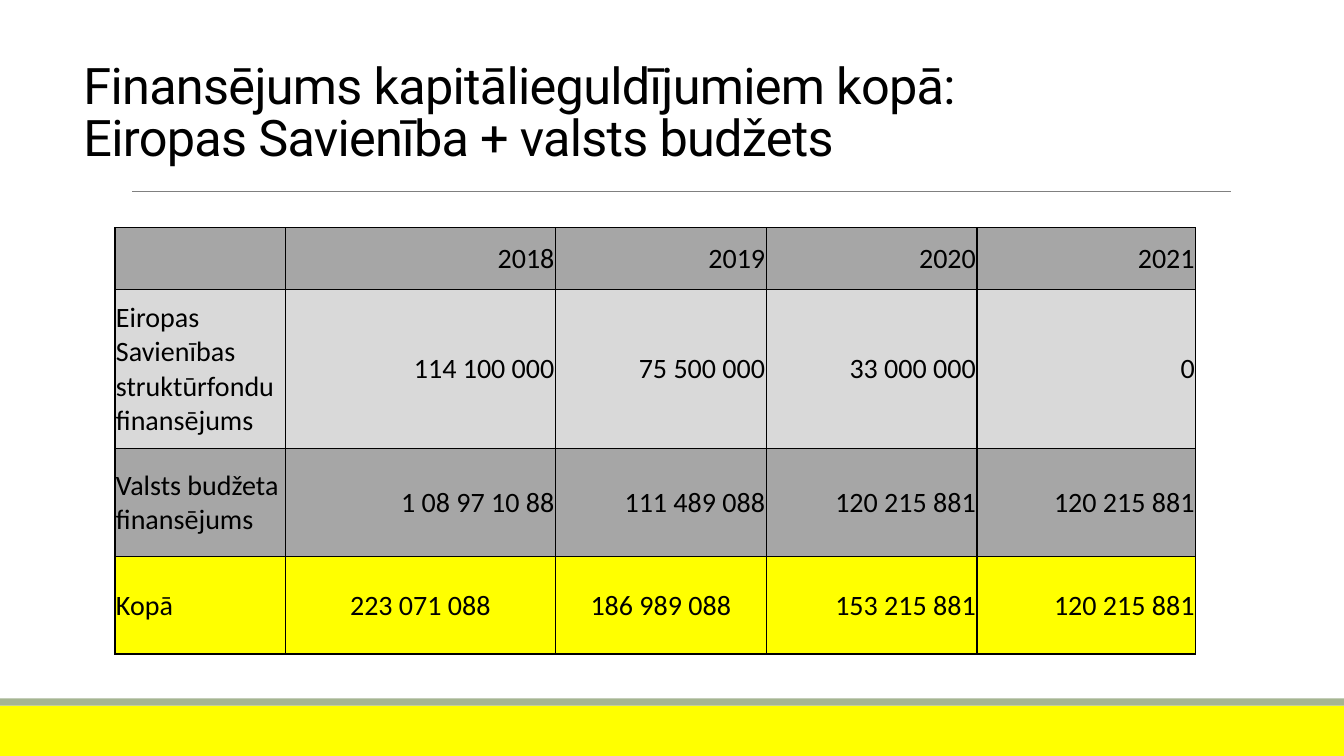
"""Build the slide on total funding for capital investment."""
from dataclasses import dataclass

import pptx
import pptx.dml.color
import pptx.enum.shapes
import pptx.enum.text
import pptx.oxml
import pptx.oxml.ns
import pptx.util
from pptx.enum.text import MSO_ANCHOR, PP_ALIGN

SCALE = 9144
BLACK, GREY, LIGHT, YELLOW = "000000", "A6A6A6", "D9D9D9", "FFFF00"
LEFT, MID, RIGHT = PP_ALIGN.LEFT, PP_ALIGN.CENTER, PP_ALIGN.RIGHT


@dataclass(frozen=True)
class Band:
    top: int
    height: int
    color: str


@dataclass(frozen=True)
class Row:
    height: int
    fill: str
    texts: tuple[str, ...]
    aligns: tuple = (LEFT, RIGHT, RIGHT, RIGHT, RIGHT)


BANDS = (Band(700, 50, YELLOW), Band(693, 7, "A5B592"))
COLS = (169, 268, 209, 209, 217)
ROWS = (
    Row(61, GREY, ("", "2018", "2019", "2020", "2021")),
    Row(158, LIGHT, ("Eiropas Savienības struktūrfondu finansējums",
                     "114 100 000", "75 500 000", "33 000 000", "0")),
    Row(107, GREY, ("Valsts budžeta finansējums", "1 08 97 10 88",
                    "111 489 088", "120 215 881", "120 215 881")),
    Row(97, YELLOW, ("Kopā", "223 071 088", "186 989 088",
                     "153 215 881", "120 215 881"),
        (LEFT, MID, MID, RIGHT, RIGHT)),
)


def px(size: int) -> pptx.util.Emu:
    return pptx.util.Emu(size * SCALE)


def rgb(code: str) -> pptx.dml.color.RGBColor:
    return pptx.dml.color.RGBColor.from_string(code)


def style(font, name: str, size: int) -> None:
    font.name = name
    font.size = pptx.util.Pt(size)
    font.color.rgb = rgb(BLACK)


def paint(fill, code: str) -> None:
    fill.solid()
    fill.fore_color.rgb = rgb(code)


def draw_band(slide, band: Band) -> None:
    shape = slide.shapes.add_shape(
        pptx.enum.shapes.MSO_SHAPE.RECTANGLE,
        0, px(band.top), px(1333), px(band.height))
    shape.shadow.inherit = False
    paint(shape.fill, band.color)
    shape.line.fill.background()


def draw_rule(slide) -> None:
    rule = slide.shapes.add_connector(
        pptx.enum.shapes.MSO_CONNECTOR.STRAIGHT,
        px(131), px(190), px(1221), px(190))
    rule.line.color.rgb = rgb("808080")
    rule.line.width = pptx.util.Pt(0.5)
    pptx.oxml.ns.qn("a:effectLst")
    props = rule._element.spPr
    props.append(props.makeelement(pptx.oxml.ns.qn("a:effectLst"), {}))


def draw_title(slide) -> None:
    box = slide.shapes.add_textbox(px(73), px(81), px(1100), px(89))
    frame = box.text_frame
    frame.word_wrap = True
    frame.vertical_anchor = MSO_ANCHOR.BOTTOM
    para = frame.paragraphs[0]
    para.text = ("Finansējums kapitālieguldījumiem kopā:\v"
                 "Eiropas Savienība + valsts budžets")
    para.line_spacing = 0.85
    style(para.font, "Roboto", 36)
    for run in para.runs:
        run.font._element.set("spc", "-50")


def edge(cell) -> None:
    props = cell._tc.get_or_add_tcPr()
    space = pptx.oxml.ns.nsdecls("a")
    for side in ("lnL", "lnR", "lnT", "lnB"):
        props.append(pptx.oxml.parse_xml(
            f'<a:{side} {space} w="12700"><a:solidFill>'
            f'<a:srgbClr val="{BLACK}"/></a:solidFill></a:{side}>'))


def fill_cell(cell, text: str, align: PP_ALIGN, code: str) -> None:
    edge(cell)
    paint(cell.fill, code)
    cell.vertical_anchor = MSO_ANCHOR.MIDDLE
    cell.margin_left = cell.margin_right = cell.margin_top = px(1)
    cell.margin_bottom = 0
    para = cell.text_frame.paragraphs[0]
    para.text = text
    para.alignment = align
    style(para.font, "Calibri", 20)


def draw_table(slide) -> None:
    table = slide.shapes.add_table(
        len(ROWS), len(COLS), px(114), px(226), px(sum(COLS)),
        px(sum(row.height for row in ROWS))).table
    table.first_row = table.horz_banding = False
    for col, width in zip(table.columns, COLS):
        col.width = px(width)
    for line, row in zip(table.rows, ROWS):
        line.height = px(row.height)
        for cell, text, align in zip(line.cells, row.texts, row.aligns):
            fill_cell(cell, text, align, row.fill)


def main() -> None:
    deck = pptx.Presentation()
    deck.slide_width, deck.slide_height = px(1333), px(750)
    slide = deck.slides.add_slide(deck.slide_layouts[6])
    for band in BANDS:
        draw_band(slide, band)
    draw_rule(slide)
    draw_title(slide)
    draw_table(slide)
    deck.save("out.pptx")


if __name__ == "__main__":
    main()
